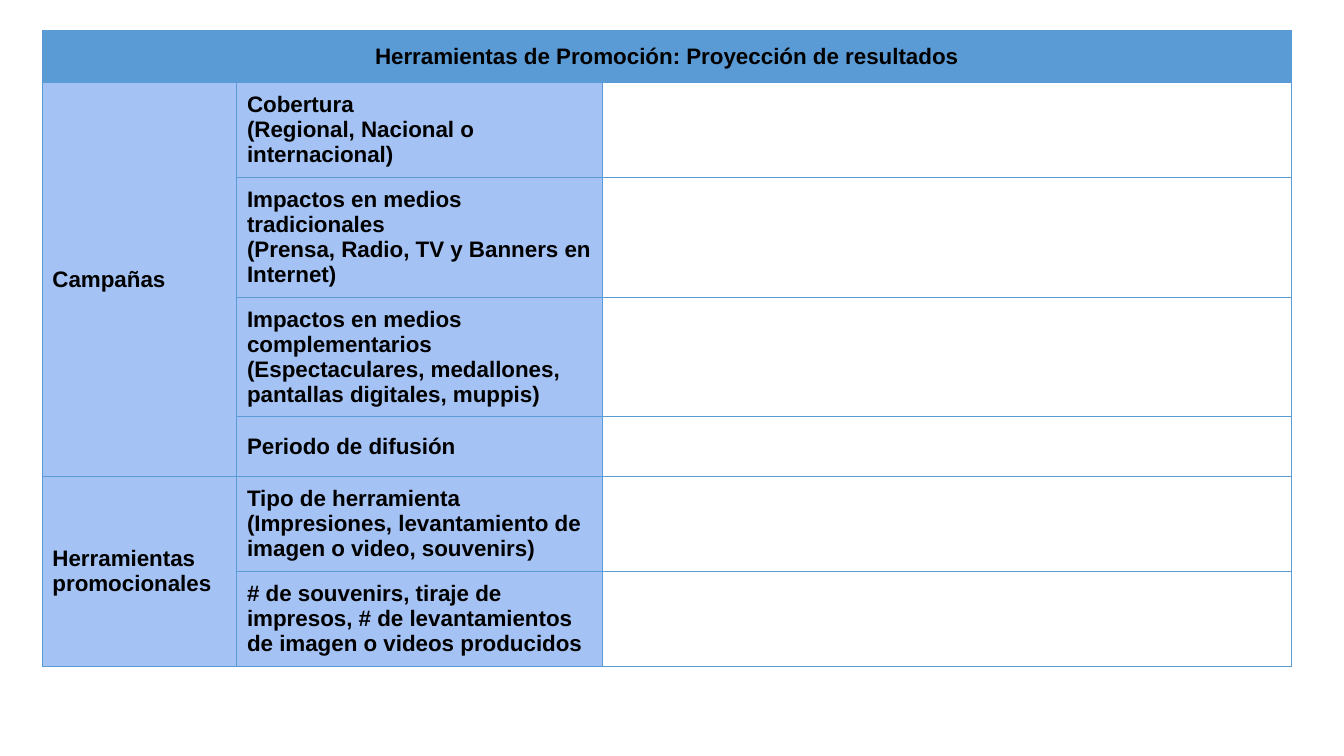
import pptx
import pptx.dml.color
import pptx.enum.text
import pptx.oxml
import pptx.oxml.ns
import pptx.util

BLUE, PALE, WHITE, BLACK = "5B9BD5", "A4C2F4", "FFFFFF", "000000"
CENTER = pptx.enum.text.PP_ALIGN.CENTER
LEFT = pptx.enum.text.PP_ALIGN.LEFT

# Shares of the slide's width and height, in percent
COLUMN_SHARES = [14.48, 27.23, 9.3, 20.33, 21.6]
ROW_SHARES = [6.93, 9.47, 7.87, 6.93, 7.87, 8.27, 10.27]

TITLE = "Herramientas de Promoción: Proyección de resultados"
GROUPS = {
    "Campañas": [
        ["Cobertura", "(Regional, Nacional o internacional)"],
        ["Impactos en medios tradicionales",
         "(Prensa, Radio, TV y Banners en Internet)"],
        ["Impactos en medios complementarios",
         "(Espectaculares, medallones, pantallas digitales, muppis)"],
        ["Periodo de difusión"],
    ],
    "Herramientas promocionales": [
        ["Tipo de herramienta",
         "(Impresiones, levantamiento de imagen o video, souvenirs)"],
        ["# de souvenirs, tiraje de impresos, "
         "# de levantamientos de imagen o videos producidos"],
    ],
}


def color(hex_text):
    return pptx.dml.color.RGBColor.from_string(hex_text)


def write(frame, lines, font="Arial", size=16, bold=True, ink=BLACK, align=LEFT):
    """Put one paragraph per line into a text frame."""
    for index, line in enumerate(lines):
        para = frame.add_paragraph() if index else frame.paragraphs[0]
        para.alignment = align
        span = para.add_run()
        span.text = line
        span.font.name = font
        span.font.size = pptx.util.Pt(size)
        span.font.bold = bold
        span.font.color.rgb = color(ink)


class Sheet:
    """The current slide with its size and table style."""

    def __init__(self, deck, border=BLUE, border_width=0.75, inset=0.1):
        self.width, self.height = deck.slide_width, deck.slide_height
        self.page = deck.slides.add_slide(deck.slide_layouts[6])
        self.border = border
        self.border_width = pptx.util.Pt(border_width)
        self.inset = pptx.util.Inches(inset)

    def across(self, percent):
        return round(self.width * percent / 100)

    def down(self, percent):
        return round(self.height * percent / 100)

    def table(self, left, top, column_shares, row_shares):
        frame = self.page.shapes.add_table(
            len(row_shares), len(column_shares),
            self.across(left), self.down(top),
            self.across(sum(column_shares)), self.down(sum(row_shares)))
        table = frame.table
        table.first_row = table.horz_banding = False
        for column, share in zip(table.columns, column_shares):
            column.width = self.across(share)
        for row, share in zip(table.rows, row_shares):
            row.height = self.down(share)
        for cell in table.iter_cells():
            self.outline(cell)
            self.paint(cell, WHITE)
        return table

    def outline(self, cell):
        properties = cell._tc.get_or_add_tcPr()
        for index, side in enumerate("LRTB"):
            properties.insert(index, pptx.oxml.parse_xml(
                f'<a:ln{side} {pptx.oxml.ns.nsdecls("a")} w="{self.border_width}">'
                f'<a:solidFill><a:srgbClr val="{self.border}"/></a:solidFill>'
                f'</a:ln{side}>'))

    def paint(self, cell, fill):
        cell.fill.solid()
        cell.fill.fore_color.rgb = color(fill)

    def label(self, cell, lines, fill=PALE, **text_format):
        self.paint(cell, fill)
        cell.vertical_anchor = pptx.enum.text.MSO_ANCHOR.MIDDLE
        cell.margin_left = cell.margin_right = self.inset
        cell.margin_top = cell.margin_bottom = self.inset
        write(cell.text_frame, lines, **text_format)


def main():
    deck = pptx.Presentation()
    deck.slide_width = pptx.util.Inches(13.33)
    deck.slide_height = pptx.util.Inches(7.5)
    sheet = Sheet(deck)
    table = sheet.table(3.15, 4, COLUMN_SHARES, ROW_SHARES)

    table.cell(0, 0).merge(table.cell(0, 4))
    sheet.label(table.cell(0, 0), [TITLE], fill=BLUE, align=CENTER)

    row = 1
    for group, items in GROUPS.items():
        table.cell(row, 0).merge(table.cell(row + len(items) - 1, 0))
        sheet.label(table.cell(row, 0), [group])
        for lines in items:
            sheet.label(table.cell(row, 1), lines)
            table.cell(row, 2).merge(table.cell(row, 4))
            row += 1

    deck.save("out.pptx")


if __name__ == "__main__":
    main()
